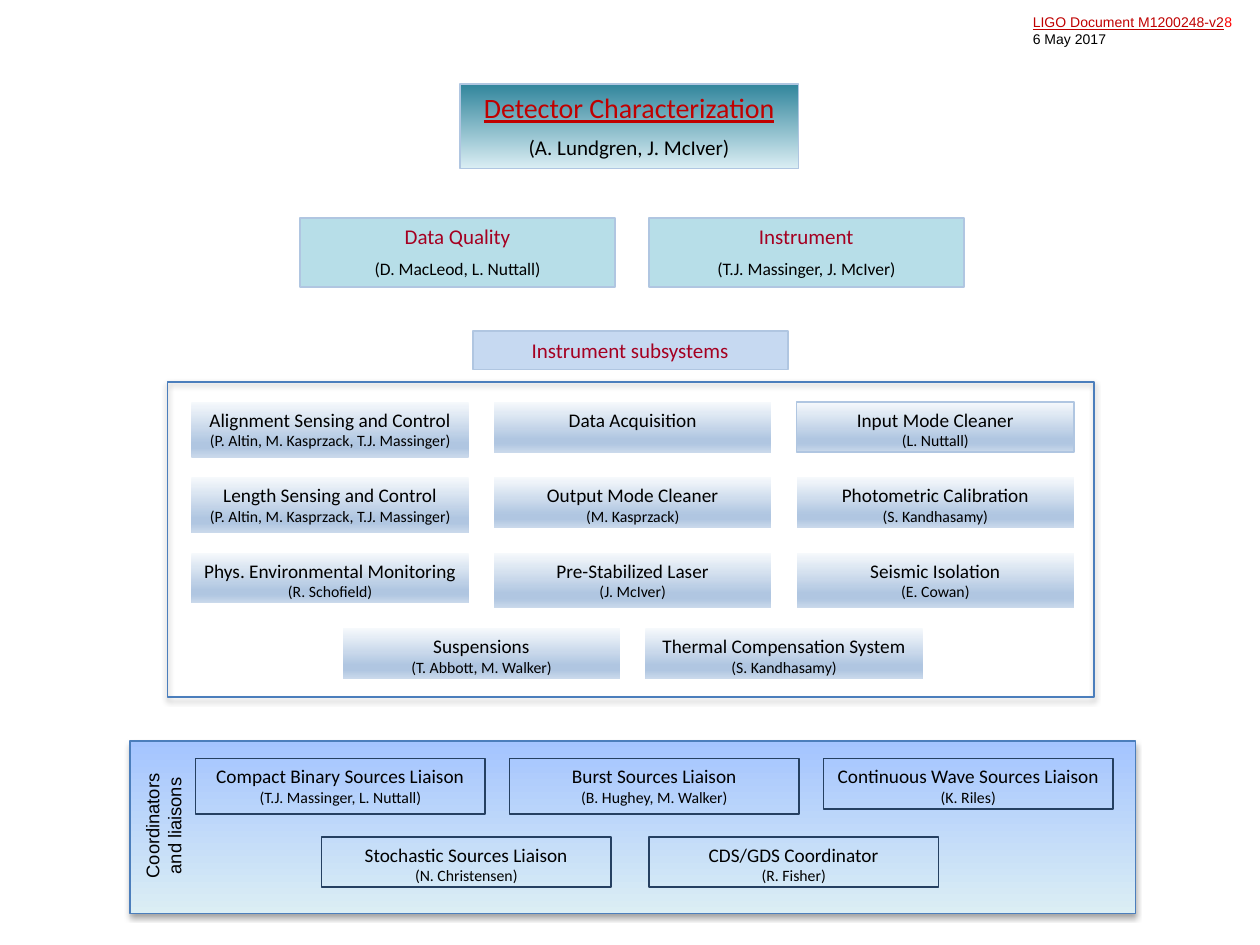
from pptx import Presentation
from pptx.dml.color import RGBColor
from pptx.enum.shapes import MSO_SHAPE
from pptx.enum.text import MSO_ANCHOR, PP_ALIGN
from pptx.oxml import parse_xml
from pptx.oxml.ns import nsdecls
from pptx.util import Cm, Pt

RECT = MSO_SHAPE.RECTANGLE
TOP = MSO_ANCHOR.TOP
CENTER, LEFT = PP_ALIGN.CENTER, PP_ALIGN.LEFT

# Colours and gradients (top to bottom)
PALE, NAVY, BLUE = "B0C6E1", "254061", "4B7EBC"
RED, CRIMSON = "C00000", "A50021"
TITLE_FILL = [(0, "31859C"), (100, "DBEEF4")]
SUBSYSTEM_FILL = [(0, "F6F9FC"), (74, PALE), (83, PALE), (100, "CAD9EB")]
COORD_FILL = [(0, "A4C4FF"), (100, "DBEEF4")]

# Content: heading boxes as (place, fill, title, title format, names, names size)
TITLE_FMT = {"size": 16, "color": RED, "underline": True}
GROUP_FMT = {"size": 12, "color": CRIMSON}
HEADINGS = [
    ((9.27, 1.7, 6.83, 1.7), TITLE_FILL, "Detector Characterization", TITLE_FMT,
     "(A. Lundgren, J. McIver)", 12),
    ((6.05, 4.39, 6.35, 1.4), "B7DEE8", "Data Quality", GROUP_FMT,
     "(D. MacLeod, L. Nuttall)", 10),
    ((13.08, 4.39, 6.35, 1.4), "B7DEE8", "Instrument", GROUP_FMT,
     "(T.J. Massinger, J. McIver)", 10),
    ((9.53, 6.68, 6.35, 0.77), "C6D9F1", "Instrument subsystems", GROUP_FMT, "", 10),
]

# Rows of boxes: (title, names, height)
LOW, TALL = 1.02, 1.12
SUBSYSTEMS = [
    [("Alignment Sensing and Control", "(P. Altin, M. Kasprzack, T.J. Massinger)", TALL),
     ("Data Acquisition", "", LOW),
     ("Input Mode Cleaner", "(L. Nuttall)", LOW)],
    [("Length Sensing and Control", "(P. Altin, M. Kasprzack, T.J. Massinger)", TALL),
     ("Output Mode Cleaner", "(M. Kasprzack)", LOW),
     ("Photometric Calibration", "(S. Kandhasamy)", LOW)],
    [("Phys. Environmental Monitoring", "(R. Schofield)", LOW),
     ("Pre-Stabilized Laser", "(J. McIver)", TALL),
     ("Seismic Isolation", "(E. Cowan)", TALL)],
    [("Suspensions", "(T. Abbott, M. Walker)", LOW),
     ("Thermal Compensation System", "(S. Kandhasamy)", LOW)],
]
OUTLINED = "Input Mode Cleaner"

# Coordinator rows: (left, pitch, boxes)
COORDINATORS = [
    (3.94, 6.33, [
        ("Compact Binary Sources Liaison", "(T.J. Massinger, L. Nuttall)", TALL),
        ("Burst Sources Liaison", "(B. Hughey, M. Walker)", TALL),
        ("Continuous Wave Sources Liaison", "(K. Riles)", LOW)]),
    (6.48, 6.6, [
        ("Stochastic Sources Liaison", "(N. Christensen)", LOW),
        ("CDS/GDS Coordinator", "(R. Fisher)", LOW)]),
]


def rgb(color):
    return RGBColor.from_string(color)


def write(sp, paragraphs, align=CENTER, gap=0):
    """Each paragraph is a list of (text, format) runs."""
    tf = sp.text_frame
    for name, value in {"word_wrap": True, "vertical_anchor": TOP,
                        "margin_bottom": 0}.items():
        setattr(tf, name, value)
    for i, runs in enumerate(paragraphs):
        p = tf.paragraphs[0] if i == 0 else tf.add_paragraph()
        p.alignment = align
        p.space_before = Pt(gap if i else 0)
        for text, fmt in runs:
            r = p.add_run()
            r.text = text
            values = {"name": "Calibri", "color": "000000", **fmt}
            r.font.color.rgb = rgb(values.pop("color"))
            values["size"] = Pt(values["size"])
            for name, value in values.items():
                setattr(r.font, name, value)


def add_box(place, fill=None, line=None, width=1, shadow=False):
    sp = s.shapes.add_shape(RECT, *map(Cm, place))
    sp.shadow.inherit = False
    if isinstance(fill, list):
        stops = "".join(f'<a:gs pos="{pos * 1000}"><a:srgbClr val="{color}"/></a:gs>'
                        for pos, color in fill)
        sp.element.spPr.insert(2, parse_xml(
            f'<a:gradFill {nsdecls("a")} rotWithShape="1"><a:gsLst>{stops}</a:gsLst>'
            '<a:lin ang="5400000" scaled="0"/></a:gradFill>'))
    elif fill:
        sp.fill.solid()
        sp.fill.fore_color.rgb = rgb(fill)
    else:
        sp.fill.background()
    if line:
        sp.line.color.rgb = rgb(line)
        sp.line.width = Pt(width)
    else:
        sp.line.fill.background()
    if shadow:
        sp.element.spPr.find(".//{*}effectLst").append(parse_xml(
            f'<a:outerShdw {nsdecls("a")} blurRad="40000" dist="23000" dir="5400000" '
            'rotWithShape="0"><a:srgbClr val="000000"><a:alpha val="35000"/></a:srgbClr>'
            '</a:outerShdw>'))
    return sp


def two_lines(title, title_fmt, names, names_size):
    lines = [[(title, title_fmt)]]
    if names:
        lines.append([(names, {"size": names_size})])
    return lines


def add_row(boxes, left, top, pitch, width, fill=None, line=None):
    for i, (title, names, height) in enumerate(boxes):
        sp = add_box((left + i * pitch, top, width, height), fill,
                     PALE if title == OUTLINED else line)
        write(sp, two_lines(title, {"size": 11}, names, 9))


prs = Presentation()
prs.slide_width, prs.slide_height = Cm(25.4), Cm(19.05)
s = prs.slides.add_slide(prs.slide_layouts[6])

# Document number and date
ARIAL = {"name": "Arial", "size": 8}
sp = s.shapes.add_textbox(*map(Cm, (20.57, 0.15, 4.67, 0.94)))
write(sp, [[("LIGO Document M1200248-v2", {**ARIAL, "color": RED, "underline": True}),
            ("8", {**ARIAL, "color": "FF0000"})],
           [("6 May 2017", ARIAL)]], LEFT)

# Instrument subsystems: a shorter row is centred under the full ones
add_box((3.38, 7.7, 18.67, 6.35), line=BLUE, shadow=True)
PITCH = 6.1
for i, row in enumerate(SUBSYSTEMS):
    left = 3.86 + (3 - len(row)) * PITCH / 2
    add_row(row, left, 8.1 + i * 1.52, PITCH, 5.59, SUBSYSTEM_FILL)

# Heading boxes
for place, fill, title, fmt, names, size in HEADINGS:
    write(add_box(place, fill, PALE), two_lines(title, fmt, names, size), gap=size / 2)

# Coordinators and liaisons
add_box((2.62, 14.94, 20.27, 3.48), COORD_FILL, BLUE, 0.75, shadow=True)
for i, (left, pitch, row) in enumerate(COORDINATORS):
    add_row(row, left, 15.29 + i * 1.58, pitch, 5.84, line=NAVY)
sp = s.shapes.add_textbox(*map(Cm, (1.55, 16.08, 3.48, 1.14)))
sp.rotation = 270
write(sp, [[(text, {"name": "Arial", "size": 10.5})]
           for text in ("Coordinators", "and liaisons")])

prs.save("out.pptx")
